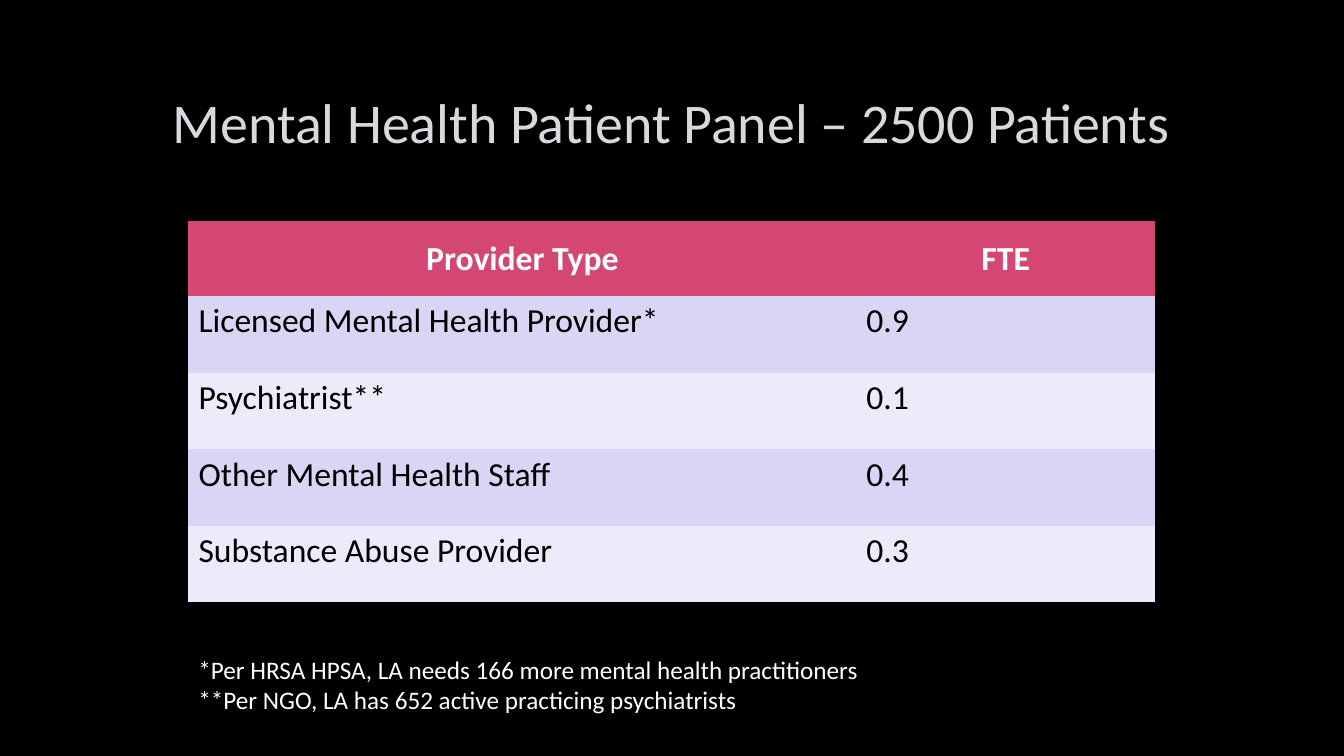
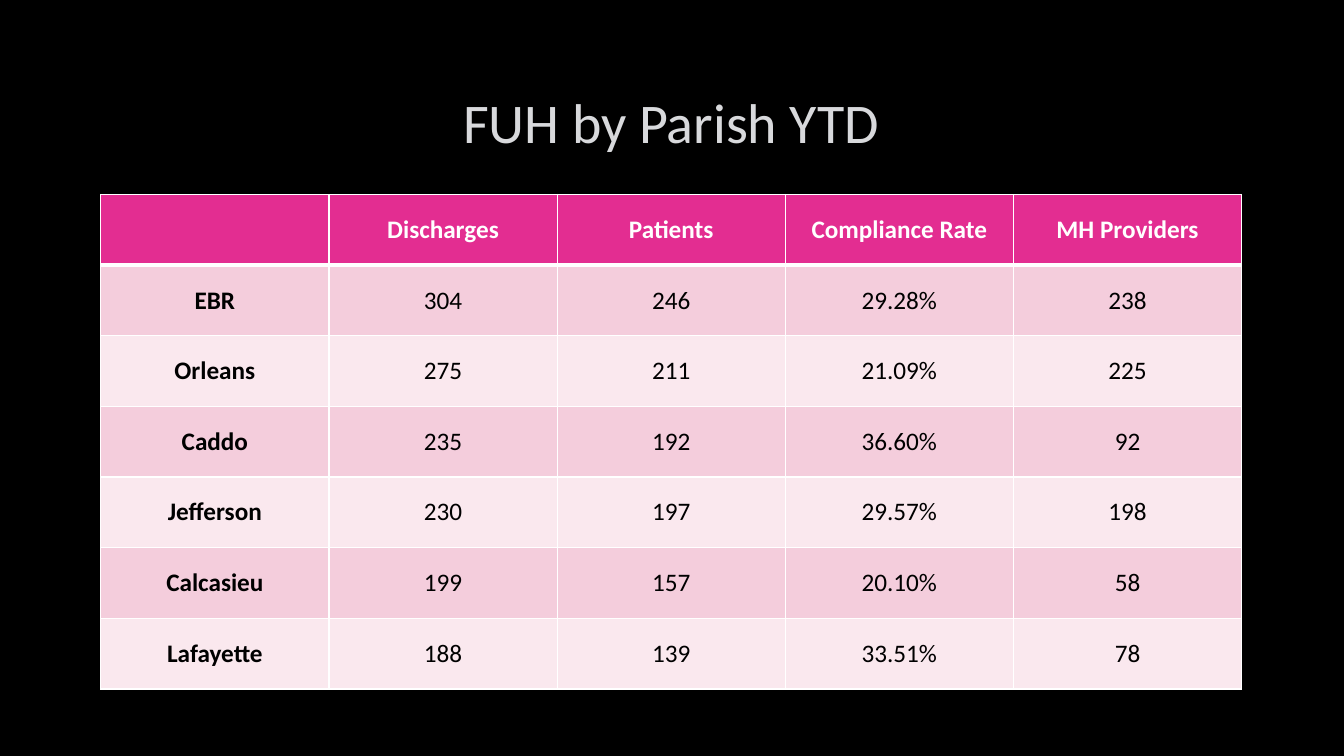
import pptx
import pptx.util
import pptx.dml.color
import pptx.enum.text
import pptx.oxml
import pptx.oxml.ns
import lxml.etree

Cm = pptx.util.Cm
Pt = pptx.util.Pt
CENTER = pptx.enum.text.PP_ALIGN.CENTER
LEFT = pptx.enum.text.PP_ALIGN.LEFT
MIDDLE = pptx.enum.text.MSO_ANCHOR.MIDDLE
TOP = pptx.enum.text.MSO_ANCHOR.TOP
qn = pptx.oxml.ns.qn

# Shared look
FONT = "Calibri"
BLACK, WHITE, TITLE_COLOR = "000000", "FFFFFF", "D8D9DC"
NO_STYLE_TABLE = "{2D5ABB26-0587-4C30-8999-92F81FD0307C}"
OUTLINE = (
    f'<a:ln {pptx.oxml.ns.nsdecls("a")} w="9525"><a:solidFill><a:srgbClr val="404040">'
    '<a:alpha val="10000"/></a:srgbClr></a:solidFill></a:ln>'
)


def paint(target, color):
    """Give a fill or a font a solid colour from a hex string."""
    if hasattr(target, "solid"):
        target.solid()
        target = target.fore_color
    else:
        target = target.color
    target.rgb = pptx.dml.color.RGBColor.from_string(color)


def write(frame, text, size=18, color=WHITE, bold=False, align=LEFT, outlined=False):
    """Write one paragraph for each line of text."""
    frame.word_wrap = True
    for index, line in enumerate(text.split("\n")):
        paragraph = frame.add_paragraph() if index else frame.paragraphs[0]
        paragraph.alignment = align
        run = paragraph.add_run()
        run.text = line
        run.font.name, run.font.size, run.font.bold = FONT, Pt(size), bold
        paint(run.font, color)
        if outlined:
            run.font._element.insert(0, pptx.oxml.parse_xml(OUTLINE))


presentation = pptx.Presentation()
presentation.slide_width, presentation.slide_height = Cm(33.87), Cm(19.05)
paint(presentation.slide_master.background.fill, BLACK)

# Content of the two slides
pages = [
    dict(
        title="Mental Health Patient Panel – 2500 Patients",
        left=4.75, top=5.58, columns=[16.83, 7.53], header_height=1.88, row_height=1.93,
        size=24, header_fill="D54773", bands=["DAD5F4", "EDEBF9"],
        align=LEFT, anchor=TOP, bold_first=False, borders=False,
        rows=[
            ["Provider Type", "FTE"],
            ["Licensed Mental Health Provider*", "0.9"],
            ["Psychiatrist**", "0.1"],
            ["Other Mental Health Staff", "0.4"],
            ["Substance Abuse Provider", "0.3"],
        ],
        footnote="*Per HRSA HPSA, LA needs 166 more mental health practitioners\n"
                 "**Per NGO, LA has 652 active practicing psychiatrists",
    ),
    dict(
        title="FUH by Parish YTD",
        left=2.54, top=4.9, columns=[5.75] * 5, header_height=1.78, row_height=1.78,
        size=18, header_fill="E32D91", bands=["F4CDDC", "FAE8EE"],
        align=CENTER, anchor=MIDDLE, bold_first=True, borders=True,
        rows=[
            ["", "Discharges", "Patients", "Compliance Rate", "MH Providers"],
            ["EBR", "304", "246", "29.28%", "238"],
            ["Orleans", "275", "211", "21.09%", "225"],
            ["Caddo", "235", "192", "36.60%", "92"],
            ["Jefferson", "230", "197", "29.57%", "198"],
            ["Calcasieu", "199", "157", "20.10%", "58"],
            ["Lafayette", "188", "139", "33.51%", "78"],
        ],
        footnote=None,
    ),
]

for page in pages:
    slide = presentation.slides.add_slide(presentation.slide_layouts[6])

    # Title
    title = slide.shapes.add_textbox(Cm(2.54), Cm(1.7), Cm(28.75), Cm(2.7))
    title.text_frame.vertical_anchor = MIDDLE
    write(title.text_frame, page["title"], size=40, color=TITLE_COLOR, align=CENTER, outlined=True)

    # Table grid
    rows, columns = page["rows"], page["columns"]
    heights = [page["header_height"]] + [page["row_height"]] * (len(rows) - 1)
    table = slide.shapes.add_table(
        len(rows), len(columns), Cm(page["left"]), Cm(page["top"]),
        Cm(sum(columns)), Cm(sum(heights)),
    ).table
    table._tbl.tblPr.find(qn("a:tableStyleId")).text = NO_STYLE_TABLE
    for column, width in zip(table.columns, columns):
        column.width = Cm(width)
    for row, height in zip(table.rows, heights):
        row.height = Cm(height)

    # Table cells
    for row_index, values in enumerate(rows):
        header = row_index == 0
        for column_index, value in enumerate(values):
            cell = table.cell(row_index, column_index)
            cell.vertical_anchor = MIDDLE if header else page["anchor"]
            paint(cell.fill, page["header_fill"] if header else page["bands"][(row_index - 1) % 2])
            if value:
                write(
                    cell.text_frame, value, size=page["size"],
                    color=WHITE if header else BLACK,
                    bold=header or (page["bold_first"] and column_index == 0),
                    align=CENTER if header else page["align"],
                )
            if page["borders"]:
                # White grid with a heavier rule under the header
                widths = dict(L=1, R=1, T=3 if row_index == 1 else 1, B=3 if header else 1)
                for position, (side, width) in enumerate(widths.items()):
                    line = lxml.etree.Element(qn(f"a:ln{side}"), w=str(Pt(width)))
                    fill = lxml.etree.SubElement(line, qn("a:solidFill"))
                    lxml.etree.SubElement(fill, qn("a:srgbClr"), val=WHITE)
                    cell._tc.tcPr.insert(position, line)

    # Footnote
    if page["footnote"]:
        footnote = slide.shapes.add_textbox(Cm(page["left"]), Cm(16.36), Cm(22.83), Cm(1.8))
        write(footnote.text_frame, page["footnote"])

presentation.save("out.pptx")
